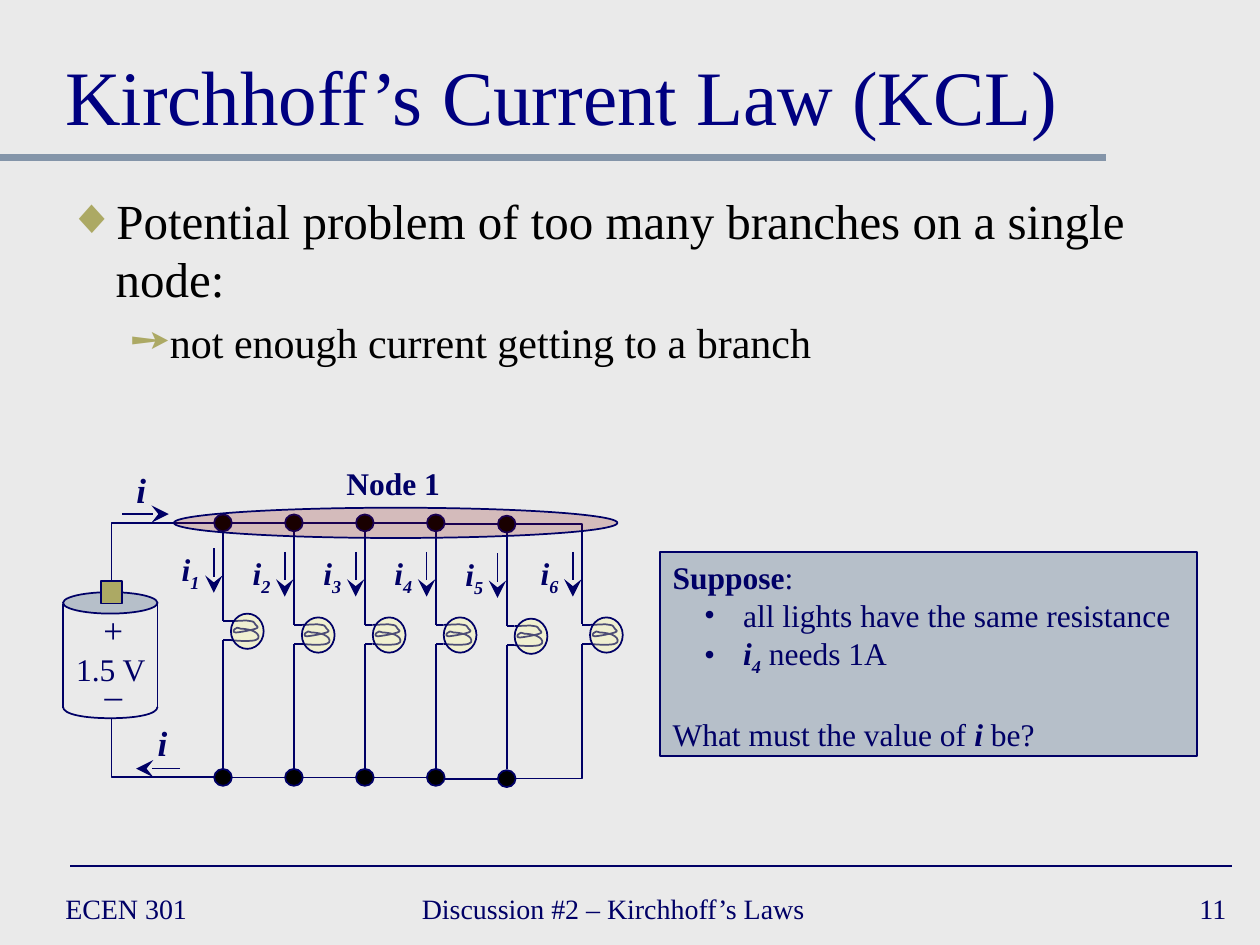
"""Builds a slide on Kirchhoff's current law with a six-lamp circuit."""
import pptx
import pptx.util
import pptx.dml.color
import pptx.enum.shapes
import pptx.enum.text
import pptx.oxml.ns
import lxml.etree

RGBColor = pptx.dml.color.RGBColor
NAVY = RGBColor(0x00, 0x00, 0x66)
BLUE = RGBColor(0x00, 0x00, 0x80)
STEEL = RGBColor(0x84, 0x95, 0xA9)
OLIVE = RGBColor(0xAC, 0xA9, 0x64)
BLACK = RGBColor(0x00, 0x00, 0x00)
CREAM = RGBColor(0xFF, 0xFF, 0x99)
WINE = RGBColor(0x80, 0x00, 0x00)
PALE = RGBColor(0xEA, 0xEA, 0xEA)

FONT = "Times New Roman"
Pt = pptx.util.Pt
qn = pptx.oxml.ns.qn
ALIGN = pptx.enum.text.PP_ALIGN
MID = pptx.enum.text.MSO_ANCHOR.MIDDLE
LOW = pptx.enum.text.MSO_ANCHOR.BOTTOM
TOP = pptx.enum.text.MSO_ANCHOR.TOP
OVAL = pptx.enum.shapes.MSO_SHAPE.OVAL
RECT = pptx.enum.shapes.MSO_SHAPE.RECTANGLE
LINE = pptx.enum.shapes.MSO_CONNECTOR.STRAIGHT
BENT = pptx.enum.shapes.MSO_CONNECTOR.ELBOW

deck = pptx.Presentation()
deck.slide_width = pptx.util.Inches(10)
deck.slide_height = pptx.util.Inches(7.5)
cell = deck.slide_width / 100
slide = deck.slides.add_slide(deck.slide_layouts[6])
slide.background.fill.solid()
slide.background.fill.fore_color.rgb = PALE


def frame(x, y, w, h, anchor=TOP, wrap=True):
    box = slide.shapes.add_textbox(*[round(v * cell) for v in (x, y, w, h)])
    box.text_frame.word_wrap = wrap
    box.text_frame.vertical_anchor = anchor
    return box.text_frame


def write(body, text, new=False, size=18, tint=NAVY, bold=False, slant=False,
          sub=False, align=ALIGN.LEFT, mark=None, left=0, hang=0, gap=0):
    para = body.add_paragraph() if new else body.paragraphs[-1]
    if new or not para.runs:
        para.alignment = align
        if gap:
            para.space_before = Pt(gap)
        if mark:
            props = para._p.get_or_add_pPr()
            props.set("marL", str(round(left * cell)))
            props.set("indent", str(round(-hang * cell)))
            if mark != "•":
                hue = lxml.etree.SubElement(props, qn("a:buClr"))
                lxml.etree.SubElement(hue, qn("a:srgbClr"), val=str(OLIVE))
            lxml.etree.SubElement(props, qn("a:buFont"), typeface=FONT)
            lxml.etree.SubElement(props, qn("a:buChar"), char=mark)
    run = para.add_run()
    run.text = text
    run.font.name = FONT
    run.font.size = Pt(size)
    run.font.color.rgb = tint
    run.font.bold = bold
    run.font.italic = slant
    if sub:
        run.font._element.set("baseline", "-25000")


write(frame(4.2, 70, 21.7, 4.2, MID), "ECEN 301", size=16)
write(frame(32.5, 70, 38.3, 4.2, MID), "Discussion #2 – Kirchhoff’s Laws", size=16)
write(frame(77.5, 70, 20.8, 4.2, MID), "11", size=16, align=ALIGN.RIGHT)
write(frame(4.2, 1.7, 91.7, 10, LOW), "Kirchhoff’s Current Law (KCL)", size=44, tint=BLUE)
body = frame(4.4, 14.6, 86.4, 15.4)
write(body, "Potential problem of too many branches on a single node:",
      size=28, tint=BLACK, mark="◆", left=3.8, hang=3.8)
write(body, "not enough current getting to a branch", new=True,
      size=24, tint=BLACK, mark="➙", left=8.1, hang=3.1, gap=4.8)

lamps = [49.3, 49.6, 49.6, 49.6, 49.7, 49.6]
posts = [17.7 + 5.63 * k for k in range(5)] + [46.2]
rails = [(41.5, 61.7)] * 4 + [(41.6, 61.8)]

wires = [(LINE, 0, 12.5, 87.8, 12.5, STEEL, 4, False),
         (LINE, 5.56, 68.75, 97.8, 68.75, NAVY, 1, False)]
wires += [(LINE, x, 47.9, x, 56.2, NAVY, 1, False) for x in (5, 12.5)]
wires += [(BENT, *ends, NAVY, 1, False) for ends in (
    (17, 41.5, 8.85, 46.1), (17, 61.7, 8.85, 57),
    (40.9, 61.8, 46.2, 51.1), (40.9, 41.6, 46.2, 49.5))]
wires += [(LINE, 9.7, 40.8, 13.4, 40.8, NAVY, 1, True),
          (LINE, 14.3, 61, 10.8, 61, NAVY, 1, True)]
for x, y in zip(posts, lamps):
    wires += [(LINE, x + 0.6, v, x, v, NAVY, 1, False) for v in (y, y + 1.5)]
    wires.append((LINE, x - 0.73, y - 5.8, x - 0.73, y - 2.25, NAVY, 1, True))
for k, (x, y, ends) in enumerate(zip(posts, lamps, rails)):
    wires += [(LINE, x, 42.2, x, y, NAVY, 1, False),
              (LINE, x, 61, x, y + 1.5, NAVY, 1, False)]
    if k:
        wires += [(LINE, posts[k - 1] + 0.7, v, x - 0.7, v, NAVY, 1, False)
                  for v in ends]

for kind, *ends, tint, width, arrow in wires:
    wire = slide.shapes.add_connector(kind, *[round(v * cell) for v in ends])
    wire.line.color.rgb = tint
    wire.line.width = Pt(width)
    props = wire._element.spPr
    if kind == BENT:
        props.find(qn("a:prstGeom")).set("prst", "bentConnector2")
    if arrow:
        lxml.etree.SubElement(props.find(qn("a:ln")), qn("a:tailEnd"),
                              type="stealth", w="lg", len="lg")
    lxml.etree.SubElement(props, qn("a:effectLst"))

coil = [(0, 0), (0.6, 0), (1.3, -0.1), (1.6, 0), (1.9, 0), (1.9, 0.2), (2, 0.3),
        (2.1, 0.4), (2.3, 0.5), (2, 0.6), (1.7, 0.7), (0.7, 0.9), (0.4, 0.9),
        (0.1, 0.9), (0.3, 0.6), (0.4, 0.6), (0.5, 0.5), (0.5, 0.5), (0.8, 0.6),
        (1.1, 0.6), (1.8, 0.7), (2, 0.9), (2.2, 1), (2.4, 1.4), (2, 1.5),
        (1.7, 1.6), (0.8, 1.6), (0, 1.5)]
bends = [[(5, 56.1), (5, 56.7), (6.7, 57), (8.75, 57),
          (10.8, 57), (12.5, 56.7), (12.5, 56.1)]]
bends += [[(x + 0.6 + u, y + v) for u, v in coil] for x, y in zip(posts, lamps)]
for spots in bends:
    spots = [(round(u * cell), round(v * cell)) for u, v in spots]
    pen = slide.shapes.build_freeform(*spots[0])
    pen.add_line_segments(spots[1:], close=False)
    shape = pen.convert_to_shape()
    route = shape._element.spPr.find(".//" + qn("a:path"))
    steps = route.findall(qn("a:lnTo"))
    for k in range(0, len(steps), 3):
        curve = lxml.etree.SubElement(route, qn("a:cubicBezTo"))
        for step in steps[k:k + 3]:
            curve.append(step[0])
            route.remove(step)
    shape.fill.background()
    shape.line.color.rgb = NAVY
    shape.line.width = Pt(1)
    shape.shadow.inherit = False

forms = [(OVAL, 5, 47, 7.5, 1.7, STEEL, 50), (RECT, 8, 46.1, 1.7, 1.8, OLIVE, 100)]
forms += [(OVAL, x + 0.63, y - 0.6, 2.6, 2.8, CREAM, 30) for x, y in zip(posts, lamps)]
forms += [(OVAL, x - 0.7, v - 0.67, 1.4, 1.34, BLACK, 100)
          for x, ends in zip(posts, rails) for v in ends]
forms += [(OVAL, 13.8, 40.3, 35.2, 2.4, WINE, 20),
          (RECT, 52.4, 43.8, 42.6, 16.2, STEEL, 50)]
for kind, *spot, tint, alpha in forms:
    shape = slide.shapes.add_shape(kind, *[round(v * cell) for v in spot])
    shape.shadow.inherit = False
    shape.fill.solid()
    shape.fill.fore_color.rgb = tint
    shape.line.color.rgb = NAVY
    shape.line.width = Pt(1)
    if alpha < 100:
        hue = shape._element.spPr.find(qn("a:solidFill"))[0]
        lxml.etree.SubElement(hue, qn("a:alpha"), val=str(alpha * 1000))

body = shape.text_frame
body.word_wrap = True
body.vertical_anchor = TOP
write(body, "Suppose", bold=True)
write(body, ":")
write(body, "all lights have the same resistance", new=True, mark="•", left=5.6, hang=3.1)
write(body, "i", new=True, bold=True, slant=True, mark="•", left=5.6, hang=3.1)
write(body, "4", bold=True, slant=True, sub=True)
write(body, " needs 1A")
write(body, "What must the value of ", new=True, gap=22)
write(body, "i", bold=True, slant=True)
write(body, " be?")

for text, x, y, w, h, size, bold, slant in (
        ("+", 7.2, 47.8, 3.6, 4.3, 20, False, False),
        ("_", 7.3, 52, 3.4, 4.3, 20, False, False),
        ("1.5 V", 5, 51.1, 7.6, 4, 18, False, False),
        ("i", 9.8, 36.7, 2.8, 4.3, 20, True, True),
        ("i", 11.5, 56.8, 2.8, 4.3, 20, True, True),
        ("Node 1", 26.5, 36.3, 9.4, 4, 18, True, False)):
    write(frame(x, y, w, h, wrap=False), text, size=size, bold=bold,
          slant=slant, align=ALIGN.CENTER)
for k, (x, y) in enumerate(zip(posts, lamps), 1):
    body = frame(x - 4.33, y - 6.1, 3.5, 4, wrap=False)
    write(body, "i", bold=True, slant=True, align=ALIGN.CENTER)
    write(body, str(k), bold=True, slant=True, sub=True)

deck.save("out.pptx")
